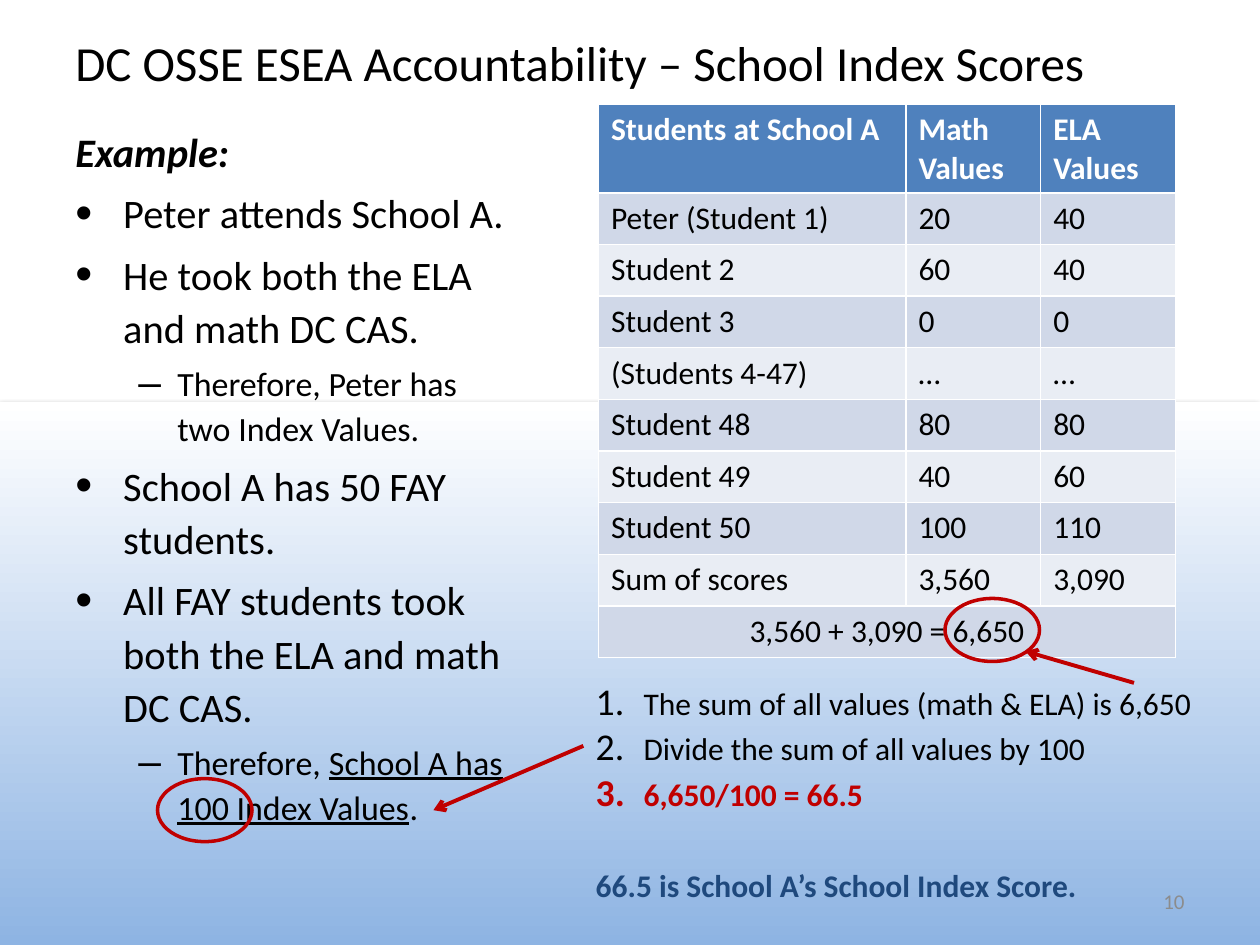
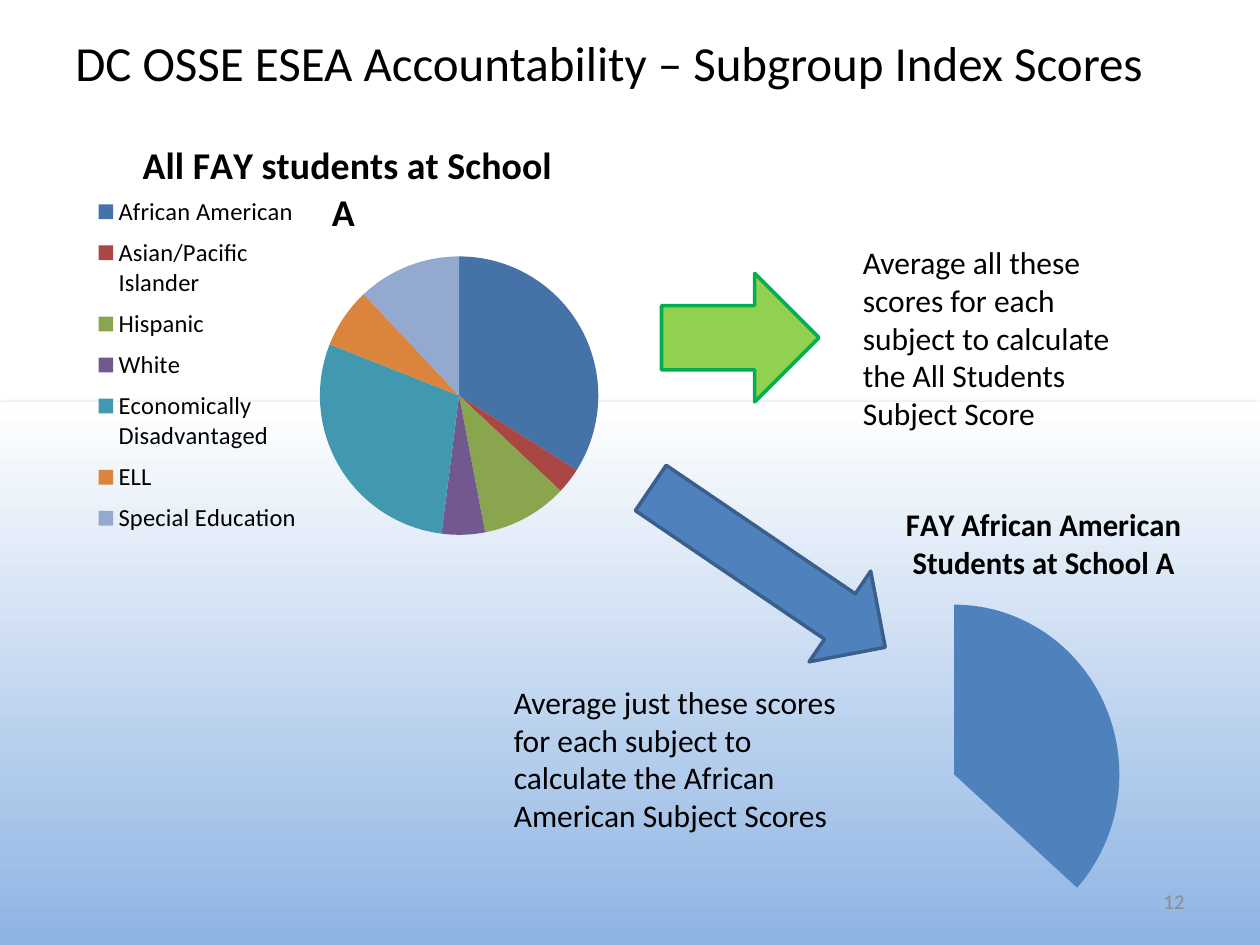
import pptx
import pptx.chart.data
import pptx.dml.color
import pptx.enum.chart
import pptx.enum.shapes
import pptx.enum.text
import pptx.oxml
import pptx.util
from pptx.util import Inches

FONT = "Calibri"
BLACK, WHITE, RED, NAVY, GREY = "000000", "FFFFFF", "C00000", "1F497D", "8C8C8C"
BLUE, SKY = "4F81BD", "8EB4E3"
BANDS = ["D0D8E8", "E9EDF4"]
SHAPES = pptx.enum.shapes.MSO_SHAPE
ALIGN = pptx.enum.text.PP_ALIGN
ANCHOR = pptx.enum.text.MSO_ANCHOR

TITLE = "DC OSSE ESEA Accountability – {} Index Scores"
PAGES = [("School", "10"), ("Subgroup", "12")]

DOT = '<a:buFont xmlns:a="{0}" typeface="Arial"/>', '<a:buChar xmlns:a="{0}" char="•"/>'
DASH = '<a:buFont xmlns:a="{0}" typeface="Arial"/>', '<a:buChar xmlns:a="{0}" char="–"/>'
NUMBER = ('<a:buAutoNum xmlns:a="{0}" type="arabicPeriod"/>',)
BULLET_SIZE = '<a:buSzPct xmlns:a="{0}" val="120000"/>'
DRAWING = "http://schemas.openxmlformats.org/drawingml/2006/main"

LEVELS = {
    "plain": dict(size=18),
    "heading": dict(size=23.1, before=4.6, spacing=1.1),
    "point": dict(size=23.1, before=4.6, spacing=1.1, bullet=DOT, left=0.38, hang=0.38),
    "detail": dict(size=19.4, before=3.9, spacing=1.1, bullet=DASH, left=0.81, hang=0.31),
    "step": dict(size=18, spacing=1.2, bullet=NUMBER, left=0.38, hang=0.38),
    "result": dict(size=18, before=26, spacing=1.2),
}

EXAMPLE = [
    ("heading", [("Example:", dict(bold=True, italic=True))]),
    ("point", [("Peter attends School A.", {})]),
    ("point", [("He took both the ELA and math DC CAS.", {})]),
    ("detail", [("Therefore, Peter has two Index Values.", {})]),
    ("point", [("School A has 50 FAY students.", {})]),
    ("point", [("All FAY students took both the ELA and math DC CAS.", {})]),
    ("detail", [("Therefore, ", {}), ("School A has 100 Index Values", dict(underline=True)), (".", {})]),
]
STEPS = [
    ("step", [("The sum of all values (math & ELA) is 6,650", {})]),
    ("step", [("Divide the sum of all values by 100", {})]),
    ("step", [("6,650/100 = 66.5", dict(bold=True, color=RED))]),
    ("result", [("66.5 is School A’s School Index Score.", dict(bold=True, color=NAVY))]),
]
SCORES = [
    ("Students at School A", "Math Values", "ELA Values"),
    ("Peter (Student 1)", "20", "40"),
    ("Student 2", "60", "40"),
    ("Student 3", "0", "0"),
    ("(Students 4-47)", "…", "…"),
    ("Student 48", "80", "80"),
    ("Student 49", "40", "60"),
    ("Student 50", "100", "110"),
    ("Sum of scores", "3,560", "3,090"),
    ("3,560 + 3,090 = 6,650",),
]
COLUMN_WIDTHS = [2.44, 1.07, 1.07]
CIRCLES = [(7.5, 4.75), (1.25, 6.18)]
POINTERS = [(9, 5.42, 8.14, 5.17), (4.63, 5.92, 3.44, 6.43)]

PIES = [
    dict(at=(0.55, 0.92, 4.42, 3.47), title="All FAY students at School A ", size=21.6,
         slices=[("African American", 34, "4572A7"), ("Asian/Pacific Islander", 3, "AA4643"),
                 ("Hispanic", 10, "89A54E"), ("White", 5, "71588F"),
                 ("Economically Disadvantaged", 29, "4198AF"), ("ELL", 7, "DB843D"),
                 ("Special Education", 12, "93A9CF")],
         plot=(0.45, 0.32, 0.5, 0.64), legend=(0.03, 0.16, 0.4, 0.82)),
    dict(at=(5.92, 3.83, 3.5, 3.83), title="FAY African American Students at School A", size=18,
         slices=[("1", 37, BLUE), ("2", 11, None), ("3", 5, None), ("4", 32, None), ("5", 16, None)],
         plot=(0.1, 0.25, 0.77, 0.71), heading=(0.36, 0.03)),
]
ARROWS = [
    ((5.25, 2.17, 1.25, 1.02), 0, "92D050", "00B050"),
    ((4.97, 4.07, 2.25, 0.87), 34.2, BLUE, "3A5F8C"),
]
NOTES = [
    ((6.75, 1.88, 2.5, 1.62),
     "Average all these scores for each subject to calculate the All Students Subject Score"),
    ((3.98, 5.37, 2.77, 1.31),
     "Average just these scores for each subject to calculate the African American Subject Scores"),
]


def rgb(color):
    return pptx.dml.color.RGBColor.from_string(color)


def inches(lengths):
    return [Inches(length) for length in lengths]


def add_xml(parent, markup):
    parent.append(pptx.oxml.parse_xml(markup.format(DRAWING)))


def format_font(font, size, color=BLACK, **formats):
    font.name, font.size, font.color.rgb = FONT, pptx.util.Pt(size), rgb(color)
    for name, value in formats.items():
        setattr(font, name, value)


def add_span(para, text, size, **formats):
    span = para.add_run()
    span.text = text
    format_font(span.font, size, **formats)


def add_box(page, at, anchor=ANCHOR.TOP):
    frame = page.shapes.add_textbox(*inches(at)).text_frame
    frame.word_wrap = True
    frame.vertical_anchor = anchor
    return frame


def add_paragraphs(page, at, paragraphs):
    frame = add_box(page, at)
    for index, (level, spans) in enumerate(paragraphs):
        para = frame.add_paragraph() if index else frame.paragraphs[0]
        style = LEVELS[level]
        para.line_spacing = style.get("spacing", 1.0)
        para.space_before = pptx.util.Pt(style.get("before", 0))
        if "bullet" in style:
            properties = para._p.get_or_add_pPr()
            properties.set("marL", str(Inches(style["left"])))
            properties.set("indent", str(-Inches(style["hang"])))
            for markup in (BULLET_SIZE, *style["bullet"]):
                add_xml(properties, markup)
        for text, formats in spans:
            add_span(para, text, style["size"], **formats)


def add_shape(page, kind, at, fill=None, line=None, rotation=0):
    shape = page.shapes.add_shape(kind, *inches(at))
    shape.shadow.inherit = False
    shape.rotation = rotation
    if fill:
        shape.fill.solid()
        shape.fill.fore_color.rgb = rgb(fill)
    else:
        shape.fill.background()
    if line:
        shape.line.color.rgb = rgb(line)
        shape.line.width = pptx.util.Pt(2)
    else:
        shape.line.fill.background()
    return shape


def add_page(deck, subject, number):
    page = deck.slides.add_slide(deck.slide_layouts[6])
    band = add_shape(page, SHAPES.RECTANGLE, (0, 3.19, 10, 4.31))
    band.fill.gradient()
    band.fill.gradient_angle = 90
    for stop, color, position in zip(band.fill.gradient_stops, (SKY, WHITE), (0, 1)):
        stop.color.rgb = rgb(color)
        stop.position = position
    effects = band._element.spPr.find(f"{{{DRAWING}}}effectLst")
    add_xml(effects, '<a:outerShdw xmlns:a="{0}" blurRad="39370" dist="22860" dir="5400000" '
                     'rotWithShape="0"><a:srgbClr val="000000"><a:alpha val="35000"/>'
                     '</a:srgbClr></a:outerShdw>')
    title = add_box(page, (0.5, 0.11, 9.4, 0.76), ANCHOR.MIDDLE)
    add_span(title.paragraphs[0], TITLE.format(subject), 28)
    footer = add_box(page, (7.17, 6.95, 2.33, 0.4), ANCHOR.MIDDLE)
    footer.paragraphs[0].alignment = ALIGN.RIGHT
    add_span(footer.paragraphs[0], number, 12, color=GREY)
    return page


def add_score_table(page):
    heights = [0.68] + [0.41] * (len(SCORES) - 1)
    at = (4.75, 0.83, sum(COLUMN_WIDTHS), sum(heights))
    table = page.shapes.add_table(len(SCORES), len(COLUMN_WIDTHS), *inches(at)).table
    for column, width in zip(table.columns, COLUMN_WIDTHS):
        column.width = Inches(width)
    for index, (values, height) in enumerate(zip(SCORES, heights)):
        table.rows[index].height = Inches(height)
        header = index == 0
        for position, text in enumerate(values):
            cell = table.cell(index, position)
            cell.fill.solid()
            cell.fill.fore_color.rgb = rgb(BLUE if header else BANDS[(index - 1) % 2])
            add_span(cell.text_frame.paragraphs[0], text, 18,
                     color=WHITE if header else BLACK, bold=header)
    total = table.cell(len(SCORES) - 1, 0)
    total.merge(table.cell(len(SCORES) - 1, len(COLUMN_WIDTHS) - 1))
    total.text_frame.paragraphs[0].alignment = ALIGN.CENTER


def add_pointer(page, ends):
    pointer = page.shapes.add_connector(pptx.enum.shapes.MSO_CONNECTOR.STRAIGHT, *inches(ends))
    pointer.line.color.rgb = rgb(RED)
    pointer.line.width = pptx.util.Pt(2.25)
    add_xml(pointer.line._get_or_add_ln(), '<a:tailEnd xmlns:a="{0}" type="arrow"/>')
    add_xml(pointer._element.spPr, '<a:effectLst xmlns:a="{0}"/>')


def place(element, position, inner=False):
    for old in element.findall("{*}layout"):
        element.remove(old)
    target = '<c:layoutTarget val="inner"/>' if inner else ""
    modes = "".join(f'<c:{side}Mode val="edge"/>' for side in "xy")
    sizes = "".join(f'<c:{side} val="{value}"/>' for side, value in zip("xywh", position))
    layout = pptx.oxml.parse_xml(
        '<c:layout xmlns:c="http://schemas.openxmlformats.org/drawingml/2006/chart">'
        f"<c:manualLayout>{target}{modes}{sizes}</c:manualLayout></c:layout>")
    element.insert(0 if inner else 1, layout)


def add_pie(page, pie):
    names, values, colors = zip(*pie["slices"])
    data = pptx.chart.data.CategoryChartData()
    data.categories = names
    data.add_series("Series 1", values)
    kind = pptx.enum.chart.XL_CHART_TYPE.PIE
    chart = page.shapes.add_chart(kind, *inches(pie["at"]), data).chart
    format_font(chart.font, 18)
    chart.has_title = True
    add_span(chart.chart_title.text_frame.paragraphs[0], pie["title"], pie["size"], bold=True)
    if "heading" in pie:
        place(chart.chart_title._element, pie["heading"])
    chart.has_legend = "legend" in pie
    if chart.has_legend:
        chart.legend.position = pptx.enum.chart.XL_LEGEND_POSITION.LEFT
        chart.legend.include_in_layout = False
        format_font(chart.legend.font, 14)
        place(chart.legend._element, pie["legend"])
    plot = chart.plots[0]
    plot.vary_by_categories = True
    place(chart._chartSpace.chart.plotArea, pie["plot"], inner=True)
    for index, color in enumerate(colors):
        part = plot.series[0].points[index].format
        part.line.fill.background()
        if color:
            part.fill.solid()
            part.fill.fore_color.rgb = rgb(color)
        else:
            part.fill.background()


def main():
    """Build the two index score slides."""
    deck = pptx.Presentation()
    deck.slide_width, deck.slide_height = inches((10, 7.5))
    school, subgroup = [add_page(deck, *page) for page in PAGES]

    add_paragraphs(school, (0.5, 0.92, 3.67, 6.17), EXAMPLE)
    add_paragraphs(school, (4.63, 5.32, 5.37, 2.18), STEPS)
    add_score_table(school)
    for corner in CIRCLES:
        add_shape(school, SHAPES.OVAL, (*corner, 0.75, 0.5), line=RED)
    for ends in POINTERS:
        add_pointer(school, ends)

    for pie in PIES:
        add_pie(subgroup, pie)
    for at, rotation, fill, line in ARROWS:
        add_shape(subgroup, SHAPES.RIGHT_ARROW, at, fill, line, rotation)
    for at, text in NOTES:
        add_paragraphs(subgroup, at, [("plain", [(text, {})])])
    deck.save("out.pptx")


if __name__ == "__main__":
    main()
